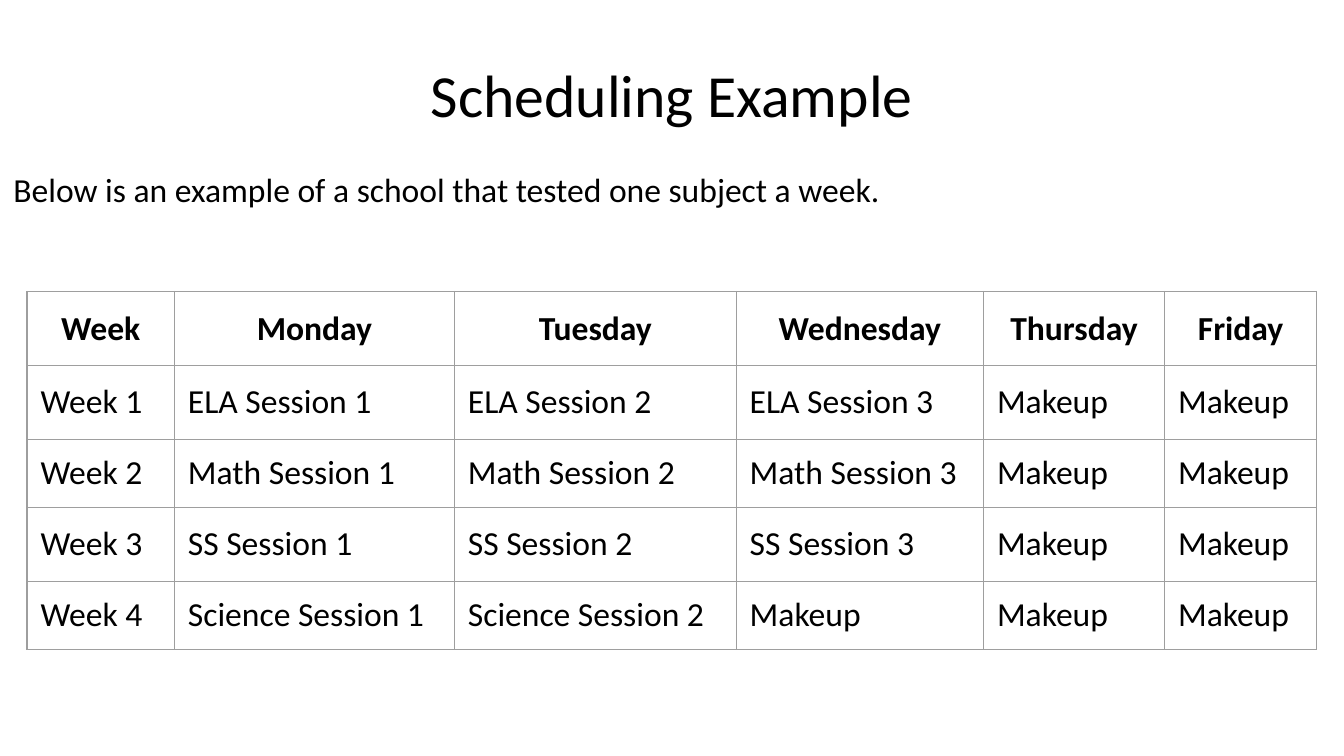
import pptx
import pptx.dml.color
import pptx.enum.text
import pptx.oxml.ns
import pptx.util
from lxml import etree

Pt = pptx.util.Pt
PP_ALIGN = pptx.enum.text.PP_ALIGN
MSO_ANCHOR = pptx.enum.text.MSO_ANCHOR
qn = pptx.oxml.ns.qn

THEME = {
    "font": "Calibri",
    "text": pptx.dml.color.RGBColor.from_string("000000"),
    "border": "9E9E9E",
    "title_size": Pt(32),
    "text_size": Pt(18),
    "border_width": Pt(0.75),
    "inset": Pt(7.2),
}


def format_text(paragraph, size, alignment, bold=False):
    paragraph.alignment = alignment
    paragraph.space_before = Pt(0)
    font = paragraph.runs[0].font
    font.name = THEME["font"]
    font.size = size
    font.bold = bold
    font.color.rgb = THEME["text"]


def add_borders(cell):
    properties = cell._tc.get_or_add_tcPr()
    for side in ("a:lnL", "a:lnR", "a:lnT", "a:lnB"):
        line = etree.SubElement(properties, qn(side), w=str(THEME["border_width"]))
        fill = etree.SubElement(line, qn("a:solidFill"))
        etree.SubElement(fill, qn("a:srgbClr"), val=THEME["border"])


presentation = pptx.Presentation()
presentation.slide_width = Pt(720)
presentation.slide_height = Pt(405)
slide = presentation.slides.add_slide(presentation.slide_layouts[1])

# Title and introduction
title = slide.shapes.title
title.left, title.top, title.width, title.height = Pt(36), Pt(16.5), Pt(648), Pt(67.5)
title.text_frame.text = "Scheduling Example"

body = slide.placeholders[1]
body.left, body.top, body.width, body.height = Pt(0), Pt(83.5), Pt(720), Pt(290)
body.text_frame.text = "Below is an example of a school that tested one subject a week."
introduction = body.text_frame.paragraphs[0]
introduction_properties = introduction._p.get_or_add_pPr()
introduction_properties.set("marL", "0")
introduction_properties.set("indent", "0")
etree.SubElement(introduction_properties, qn("a:buNone"))

for shape, anchor in ((title, MSO_ANCHOR.MIDDLE), (body, MSO_ANCHOR.TOP)):
    frame = shape.text_frame
    frame.margin_left = frame.margin_right = THEME["inset"]
    frame.margin_top = frame.margin_bottom = THEME["inset"]
    frame.vertical_anchor = anchor
    frame.auto_size = pptx.enum.text.MSO_AUTO_SIZE.NONE
    frame.word_wrap = True

format_text(title.text_frame.paragraphs[0], THEME["title_size"], PP_ALIGN.CENTER)
format_text(introduction, THEME["text_size"], PP_ALIGN.LEFT)

# Testing schedule
schedule = [
    ["Week", "Monday", "Tuesday", "Wednesday", "Thursday", "Friday"],
    ["Week 1", "ELA Session 1", "ELA Session 2", "ELA Session 3", "Makeup", "Makeup"],
    ["Week 2", "Math Session 1", "Math Session 2", "Math Session 3", "Makeup", "Makeup"],
    ["Week 3", "SS Session 1", "SS Session 2", "SS Session 3", "Makeup", "Makeup"],
    ["Week 4", "Science Session 1", "Science Session 2", "Makeup", "Makeup", "Makeup"],
]
column_widths = [79, 150, 151, 132.5, 97, 81.5]
row_heights = [39.6, 39.6, 31, 39.6, 33.8]

table = slide.shapes.add_table(
    len(row_heights), len(column_widths),
    Pt(14.5), Pt(156.2), Pt(sum(column_widths)), Pt(sum(row_heights)),
).table
table.first_row = False
table.horz_banding = False
for column, width in zip(table.columns, column_widths):
    column.width = Pt(width)

for row_index, (row, height, texts) in enumerate(zip(table.rows, row_heights, schedule)):
    row.height = Pt(height)
    is_header = row_index == 0
    alignment = PP_ALIGN.CENTER if is_header else PP_ALIGN.LEFT
    for cell, text in zip(row.cells, texts):
        cell.text_frame.text = text
        format_text(cell.text_frame.paragraphs[0], THEME["text_size"], alignment, is_header)
        cell.vertical_anchor = MSO_ANCHOR.MIDDLE
        cell.margin_left = cell.margin_right = THEME["inset"]
        cell.margin_top = cell.margin_bottom = THEME["inset"]
        add_borders(cell)
        cell.fill.background()

presentation.save("out.pptx")
